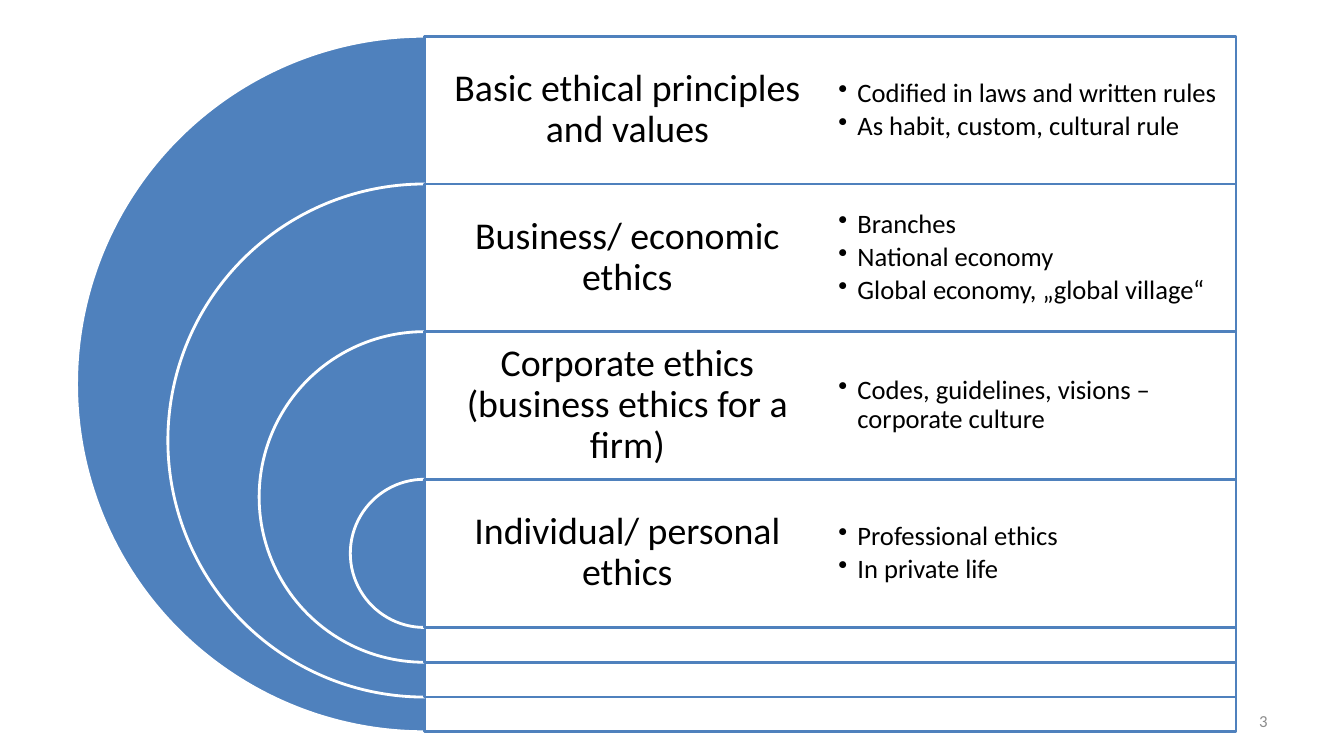
import pptx
import pptx.dml.color
import pptx.enum.shapes
import pptx.enum.text
import pptx.oxml.ns
import pptx.util
import lxml.etree

Inches = pptx.util.Inches
Pt = pptx.util.Pt
PRESET = pptx.enum.shapes.MSO_SHAPE
ALIGN = pptx.enum.text.PP_ALIGN
qn = pptx.oxml.ns.qn


def rgb(value):
    return pptx.dml.color.RGBColor.from_string(value)


def add_text(text, left, top, width, height, size, color="000000", align=ALIGN.LEFT,
             inset=0.1, line_spacing=1.0, space_after=0, bullet_indent=0):
    box = slide.shapes.add_textbox(Inches(left), Inches(top), Inches(width), Inches(height))
    frame = box.text_frame
    frame.word_wrap = True
    frame.vertical_anchor = pptx.enum.text.MSO_ANCHOR.MIDDLE
    frame.margin_left = frame.margin_right = Inches(inset)
    frame.margin_top = frame.margin_bottom = Inches(inset)
    frame.text = text
    for paragraph in frame.paragraphs:
        paragraph.alignment = align
        paragraph.line_spacing = line_spacing
        paragraph.space_after = Pt(space_after)
        paragraph.font.size = Pt(size)
        paragraph.font.name = "Calibri"
        paragraph.font.color.rgb = rgb(color)
        for run in paragraph.runs:
            run.font.size = Pt(size)
            run.font.name = "Calibri"
            run.font.color.rgb = rgb(color)
        if bullet_indent:
            properties = paragraph._p.get_or_add_pPr()
            properties.set("marL", str(Inches(bullet_indent)))
            properties.set("indent", str(-Inches(bullet_indent)))
            bullet = lxml.etree.Element(qn("a:buChar"), char="•")
            properties.find(qn("a:spcAft")).addnext(bullet)


BLUE = "4F81BD"
WHITE = "FFFFFF"
CENTER_X = 4.21
FIRST_TOP = 0.36
ROW_HEIGHT = 1.465
OUTER_DIAMETER = 6.9
DIAMETER_STEP = 1.81
PANEL_WIDTH = 8.05
COLUMN_WIDTH = PANEL_WIDTH / 2

ethics_levels = [
    ("Basic ethical principles and values",
     ["Codified in laws and written rules", "As habit, custom, cultural rule"]),
    ("Business/ economic ethics",
     ["Branches", "National economy", "Global economy, „global village“"]),
    ("Corporate ethics (business ethics for a firm)",
     ["Codes, guidelines, visions – corporate culture"]),
    ("Individual/ personal ethics",
     ["Professional ethics", "In private life"]),
]

presentation = pptx.Presentation()
presentation.slide_width = Inches(13.33)
presentation.slide_height = Inches(7.5)
slide = presentation.slides.add_slide(presentation.slide_layouts[6])

add_text("3", 9.56, 6.95, 3.11, 0.4, size=12, color="8C8C8C", align=ALIGN.RIGHT, inset=0.1)

for level, (heading, examples) in enumerate(ethics_levels):
    top = FIRST_TOP + level * ROW_HEIGHT
    diameter = OUTER_DIAMETER - level * DIAMETER_STEP

    half_circle = slide.shapes.add_shape(
        PRESET.PIE, Inches(CENTER_X - diameter / 2), Inches(top),
        Inches(diameter), Inches(diameter))
    half_circle.adjustments[0] = 54
    half_circle.adjustments[1] = 162
    panel = slide.shapes.add_shape(
        PRESET.RECTANGLE, Inches(CENTER_X), Inches(top), Inches(PANEL_WIDTH), Inches(diameter))

    for part, fill, outline in ((half_circle, BLUE, WHITE), (panel, WHITE, BLUE)):
        part.shadow.inherit = False
        part.fill.solid()
        part.fill.fore_color.rgb = rgb(fill)
        part.line.color.rgb = rgb(outline)
        part.line.width = Pt(2)

    panel_color = panel._element.spPr.find(qn("a:solidFill")).find(qn("a:srgbClr"))
    lxml.etree.SubElement(panel_color, qn("a:alpha"), val="90000")

    add_text(heading, CENTER_X, top, COLUMN_WIDTH, ROW_HEIGHT, size=27,
             align=ALIGN.CENTER, inset=0.11, line_spacing=0.9)
    add_text("\n".join(examples), CENTER_X + COLUMN_WIDTH, top, COLUMN_WIDTH, ROW_HEIGHT,
             size=19, inset=0.08, line_spacing=0.9, space_after=3, bullet_indent=0.19)

presentation.save("out.pptx")
